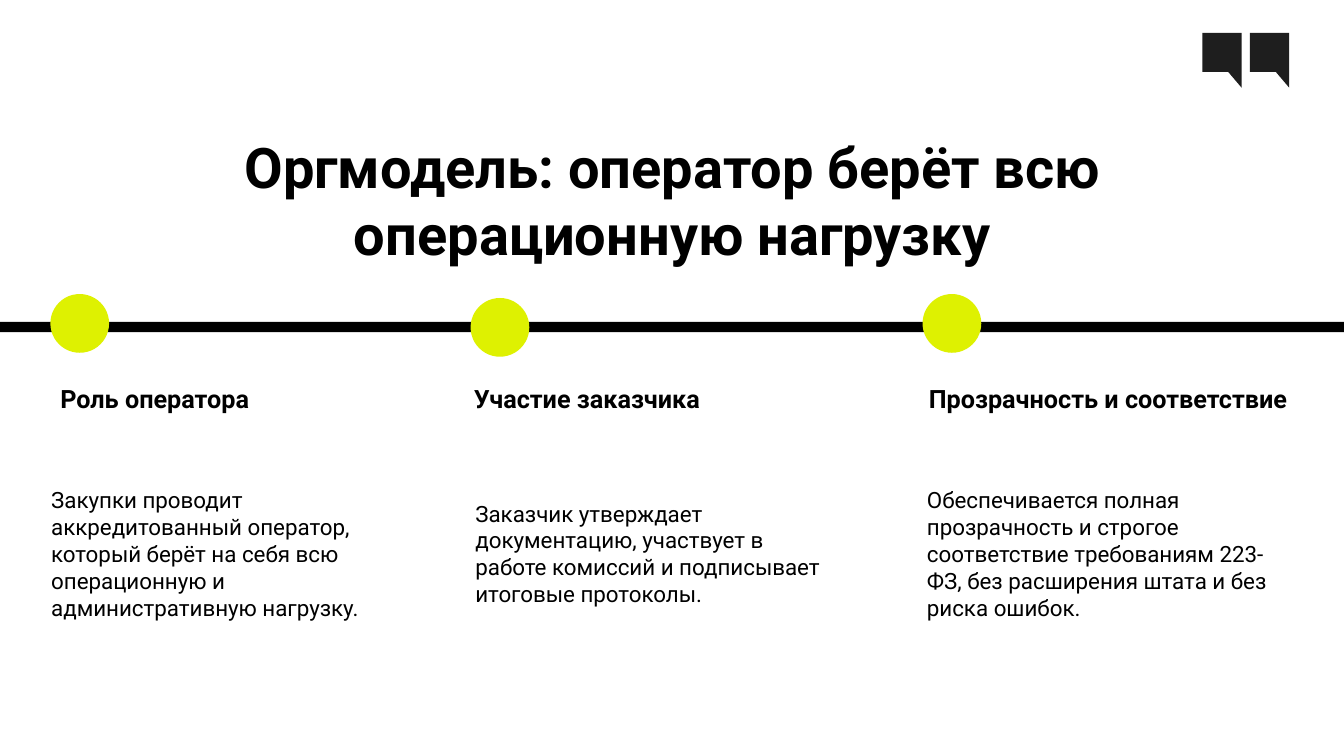
from pptx import Presentation
from pptx.dml.color import RGBColor
from pptx.enum.shapes import MSO_SHAPE as Shape
from pptx.enum.text import MSO_ANCHOR as Anchor, MSO_AUTO_SIZE as AutoSize, PP_ALIGN as Align
from pptx.util import Cm, Pt

COLORS = {"text": "000000", "line": "000000", "quote": "1E1E1E", "dot": "DEF101"}
FONT = "Roboto"
DECK_WIDTH, DECK_HEIGHT = 33.87, 19.05


class SlideBuilder:
    """Holds the style and the current slide; all lengths are in centimetres."""

    def __init__(self, slide):
        self.slide = slide

    def paint(self, shape, color):
        shape.fill.solid()
        shape.fill.fore_color.rgb = RGBColor.from_string(COLORS[color])
        shape.line.fill.background()
        shape.shadow.inherit = False

    def set_text(self, box, text, size, bold=False, align=Align.LEFT):
        frame = box.text_frame
        frame.text = text
        frame.word_wrap = True
        frame.auto_size = AutoSize.SHAPE_TO_FIT_TEXT
        frame.vertical_anchor = Anchor.MIDDLE
        para = frame.paragraphs[0]
        para.alignment = align
        para.font.name = FONT
        para.font.size = Pt(size)
        para.font.bold = bold
        para.font.color.rgb = RGBColor.from_string(COLORS["text"])

    def title(self, text, left, top, width, height):
        box = self.slide.shapes.title
        box.left, box.top, box.width, box.height = map(Cm, (left, top, width, height))
        self.set_text(box, text, 40, bold=True, align=Align.CENTER)

    def text(self, text, left, top, width, height, size, bold=False):
        box = self.slide.shapes.add_textbox(*map(Cm, (left, top, width, height)))
        self.set_text(box, text, size, bold)

    def preset(self, kind, left, top, width, height, color):
        shape = self.slide.shapes.add_shape(kind, *map(Cm, (left, top, width, height)))
        self.paint(shape, color)

    def outline(self, points, color):
        corners = [(Cm(x), Cm(y)) for x, y in points]
        builder = self.slide.shapes.build_freeform(*corners[0])
        builder.add_line_segments(corners[1:], close=True)
        self.paint(builder.convert_to_shape(), color)


def quote_mark(left, top):
    """Square mark with a pointed tail at its lower right."""
    right = left + 0.99
    return [(right, top), (left, top), (left, top + 0.98),
            (left + 0.65, top + 0.98), (right, top + 1.38)]


# Each stage: dot (left, top), heading (text, left, width), body (text, left)
STAGES = [
    ((1.27, 7.41), ("Роль оператора", 1.27, 9.58),
     ("Закупки проводит аккредитованный оператор, который берёт на себя всю "
      "операционную и административную нагрузку.", 1.04)),
    ((11.86, 7.51), ("Участие заказчика", 11.69, 10.06),
     ("Заказчик утверждает документацию, участвует в работе комиссий и "
      "подписывает итоговые протоколы.", 11.73)),
    ((23.25, 7.41), ("Прозрачность и соответствие", 23.16, 9.98),
     ("Обеспечивается полная прозрачность и строгое соответствие требованиям "
      "223-ФЗ, без расширения штата и без риска ошибок.", 23.11)),
]


def main():
    deck = Presentation()
    deck.slide_width, deck.slide_height = Cm(DECK_WIDTH), Cm(DECK_HEIGHT)
    page = SlideBuilder(deck.slides.add_slide(deck.slide_layouts[5]))

    # Timeline bar
    page.preset(Shape.RECTANGLE, 0, 8.11, DECK_WIDTH, 0.26, "line")

    # Quote marks in the corner
    for left in (30.3, 31.5):
        page.outline(quote_mark(left, 0.83), "quote")

    # Title
    page.title("Оргмодель: оператор берёт всю операционную нагрузку",
               5.64, 4.04, 22.6, 1.96)

    # Stages: dot, heading and body text
    for dot, (heading, heading_left, heading_width), (body, body_left) in STAGES:
        page.preset(Shape.OVAL, *dot, 1.48, 1.48, "dot")
        page.text(heading, heading_left, 9.53, heading_width, 1.02, 18, bold=True)
        page.text(body, body_left, 11.43, 9.37, 5.03, 16)

    deck.save("out.pptx")


if __name__ == "__main__":
    main()
